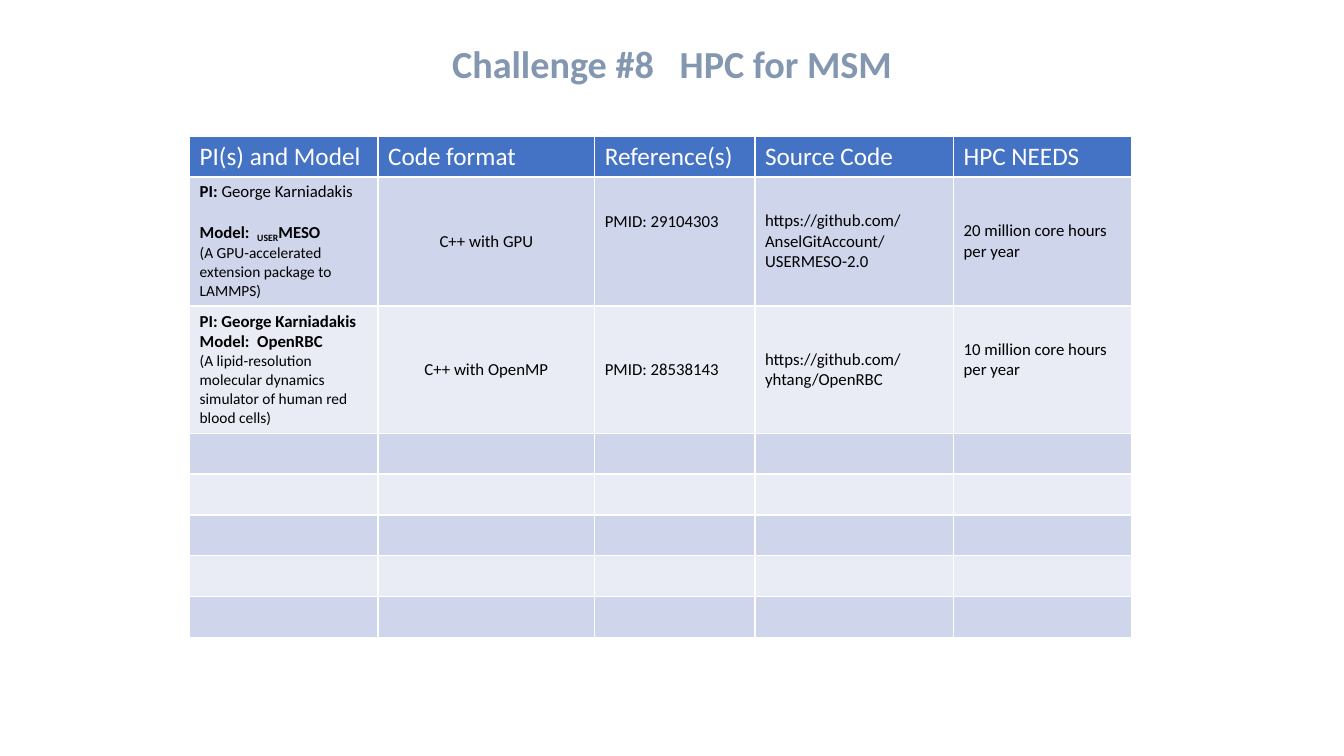
import pptx
import pptx.util
import pptx.dml.color
import pptx.enum.text
import lxml.etree

Pt = pptx.util.Pt
RGB = pptx.dml.color.RGBColor.from_string
ALIGN = pptx.enum.text.PP_ALIGN
ANCHOR = pptx.enum.text.MSO_ANCHOR
FONT = "Calibri"
COLORS = {
    "title": "8497B0", "head": "4472C4", "odd": "CFD5EA",
    "even": "E9EBF5", "line": "FFFFFF", "text": "000000",
}

WIDTHS = [134.64, 154.8, 114.48, 141.84, 127.44]
ROW = 29.2
HEIGHTS = [ROW, 92.1, 90.7] + [ROW] * 5
HEADS = ["PI(s) and Model", "Code format", "Reference(s)",
         "Source Code", "HPC NEEDS"]

# Each run: text, size, bold, extra run attributes
WIDE = (" ", 12, True, {"spc": "270"})
MODELS = [
    [[("PI: ", 12, True, {}), ("George Karniadakis", 12, False, {})],
     [("Model:", 12, True, {}), WIDE,
      ("USER", 12, True, {"baseline": "-15000"}), ("MESO", 12, True, {})],
     [("(A GPU-accelerated extension package to LAMMPS)", 11, False, {})]],
    [[("PI: George Karniadakis", 12, True, {})],
     [("Model:", 12, True, {}), WIDE, ("OpenRBC", 12, True, {})],
     [("(A lipid-resolution molecular dynamics simulator of human red "
       "blood cells)", 11, False, {})]],
]
FACTS = [
    ["C++ with GPU", "PMID: 29104303",
     "https://github.com/AnselGitAccount/USERMESO-2.0",
     "20 million core hours per year"],
    ["C++ with OpenMP", "PMID: 28538143",
     "https://github.com/yhtang/OpenRBC",
     "10 million core hours per year"],
]
# Extra bottom margin that lifts centred text, by row and column
LIFTS = {(1, 2): 28.8, (2, 4): 14.4}


def add_run(para, text, size, bold, extra, color):
    run = para.add_run()
    run.text = text
    font = run.font
    font.name, font.size, font.bold = FONT, Pt(size), bold
    font.color.rgb = RGB(COLORS[color])
    for key, value in extra.items():
        run._r.get_or_add_rPr().set(key, value)


def style_cell(cell, color):
    props = cell._tc.get_or_add_tcPr()
    ns = "{http://schemas.openxmlformats.org/drawingml/2006/main}"
    for side in ("lnL", "lnR", "lnT", "lnB"):
        line = lxml.etree.SubElement(props, ns + side, w=str(Pt(1)))
        fill = lxml.etree.SubElement(line, ns + "solidFill")
        lxml.etree.SubElement(fill, ns + "srgbClr", val=COLORS["line"])
    cell.fill.solid()
    cell.fill.fore_color.rgb = RGB(COLORS[color])


def add_title(slide, left, top, width, height):
    title = slide.shapes.title
    title.left, title.top = Pt(left), Pt(top)
    title.width, title.height = Pt(width), Pt(height)
    frame = title.text_frame
    frame.auto_size = pptx.enum.text.MSO_AUTO_SIZE.NONE
    frame.vertical_anchor = ANCHOR.MIDDLE
    para = frame.paragraphs[0]
    para.alignment = ALIGN.CENTER
    # One widened space parts the number from the topic
    for text, extra in (("Challenge #8", {}), (" ", {"spc": "1230"}),
                        ("HPC for MSM", {})):
        add_run(para, text, 27.3, True, extra, "title")


def add_grid(slide, left, top):
    grid = slide.shapes.add_table(
        len(HEIGHTS), len(WIDTHS), Pt(left), Pt(top),
        Pt(sum(WIDTHS)), Pt(sum(HEIGHTS))).table
    for col, width in zip(grid.columns, WIDTHS):
        col.width = Pt(width)
    for num, (row, height) in enumerate(zip(grid.rows, HEIGHTS)):
        row.height = Pt(height)
        for cell in row.cells:
            style_cell(cell, "head" if num == 0 else
                       "odd" if num % 2 else "even")

    # Header row
    for col, text in enumerate(HEADS):
        para = grid.cell(0, col).text_frame.paragraphs[0]
        add_run(para, text, 18, False, {}, "line")

    # Investigator and model column
    for row, lines in enumerate(MODELS, 1):
        frame = grid.cell(row, 0).text_frame
        for num, runs in enumerate(lines):
            para = frame.add_paragraph() if num else frame.paragraphs[0]
            for run in runs:
                add_run(para, *run, "text")
    grid.cell(1, 0).text_frame.paragraphs[1].space_before = Pt(14.6)

    # Remaining columns
    for row, facts in enumerate(FACTS, 1):
        for col, text in enumerate(facts, 1):
            cell = grid.cell(row, col)
            cell.vertical_anchor = ANCHOR.MIDDLE
            cell.margin_bottom = Pt(3.6 + LIFTS.get((row, col), 0))
            para = cell.text_frame.paragraphs[0]
            para.alignment = ALIGN.CENTER if col == 1 else ALIGN.LEFT
            add_run(para, text, 12, False, {}, "text")


def main():
    deck = pptx.Presentation()
    deck.slide_width, deck.slide_height = Pt(960), Pt(540)
    slide = deck.slides.add_slide(deck.slide_layouts[5])
    add_title(slide, 174, 6, 612, 78)
    add_grid(slide, 135.4, 97.2)
    deck.save("out.pptx")


if __name__ == "__main__":
    main()
